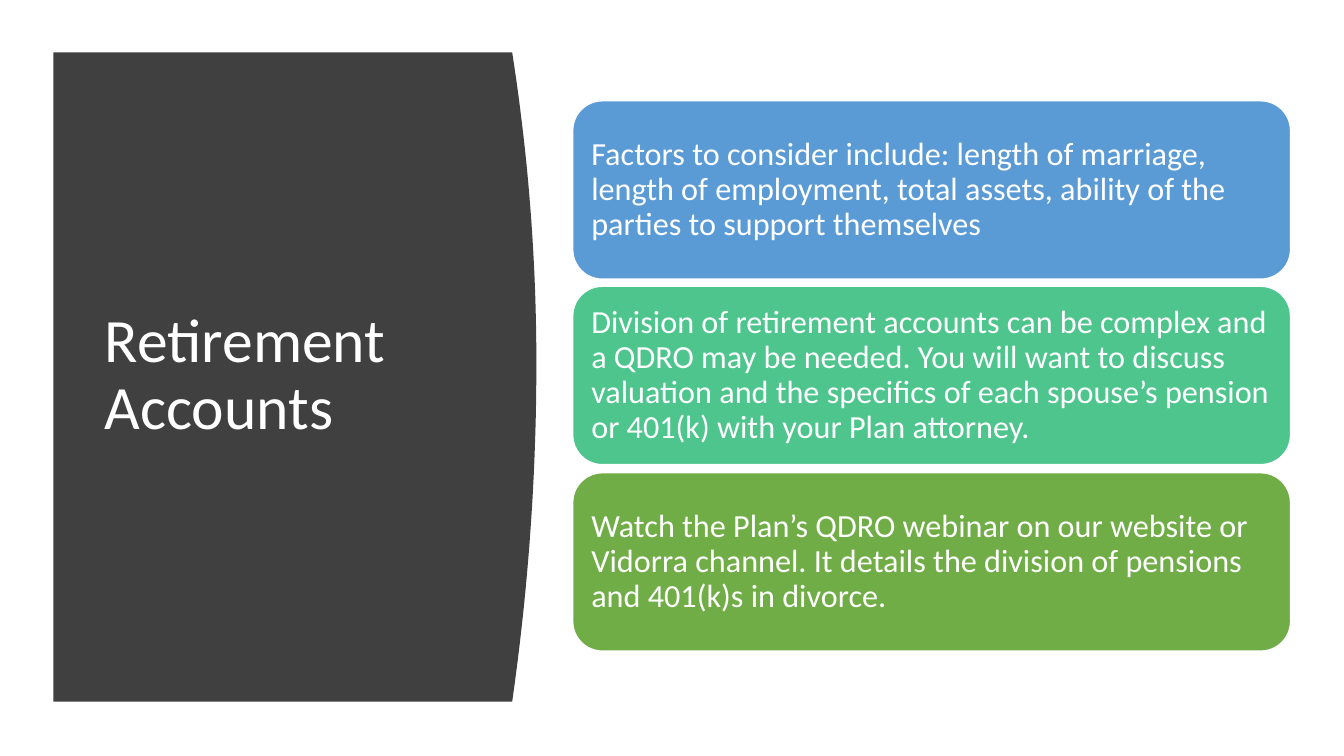
from dataclasses import dataclass

from pptx import Presentation
from pptx import util as u
from pptx.dml.color import RGBColor
from pptx.enum import shapes, text

PX = u.Inches(1) // 100  # 100 px to the inch


@dataclass(frozen=True)
class Theme:
    font: str = "Calibri"
    white: str = "FFFFFF"
    panel: str = "404040"
    cards: tuple = ("5B9BD5", "4DC58D", "70AD47")
    title_size: int = 44
    card_size: int = 23
    line_spacing: float = 0.9


def rgb(value):
    return RGBColor.from_string(value)


def set_text(frame, content, *, font, size, color, spacing, inset_x=10, inset_y=5):
    """Fill a text frame with one left-aligned, vertically centred paragraph."""
    frame.word_wrap = True
    frame.vertical_anchor = text.MSO_ANCHOR.MIDDLE
    frame.margin_left = frame.margin_right = inset_x * PX
    frame.margin_top = frame.margin_bottom = inset_y * PX
    paragraph = frame.paragraphs[0]
    paragraph.alignment = text.PP_ALIGN.LEFT
    paragraph.line_spacing = spacing
    run = paragraph.add_run()
    run.text = content
    run.font.name = font
    run.font.size = u.Pt(size)
    run.font.color.rgb = rgb(color)


class SlideBuilder:
    def __init__(self, slide, theme):
        self.slide = slide
        self.theme = theme

    def label(self, frame, content, size, **layout):
        theme = self.theme
        set_text(frame, content, font=theme.font, size=size, color=theme.white,
                 spacing=theme.line_spacing, **layout)

    def curved_panel(self, left, top, right, bottom, bulge, peak, steps=46):
        """Draw a panel whose right side bows out, furthest at height peak."""
        edge = []
        for step in range(steps + 1):
            y = top + (bottom - top) * step / steps
            reach = peak - top if y < peak else bottom - peak
            x = right + bulge * (1 - ((y - peak) / reach) ** 2)
            edge.append((round(x * PX), round(y * PX)))
        builder = self.slide.shapes.build_freeform(left * PX, top * PX)
        builder.add_line_segments(edge + [(left * PX, bottom * PX)], close=True)
        panel = builder.convert_to_shape()
        panel.shadow.inherit = False
        panel.fill.solid()
        panel.fill.fore_color.rgb = rgb(self.theme.panel)
        panel.line.fill.background()

    def title(self, content, left, top, width, height):
        box = self.slide.shapes.add_textbox(
            left * PX, top * PX, width * PX, height * PX)
        self.label(box.text_frame, content, self.theme.title_size)

    def card(self, content, color, left, top, width, height):
        card = self.slide.shapes.add_shape(
            shapes.MSO_SHAPE.ROUNDED_RECTANGLE,
            left * PX, top * PX, width * PX, height * PX)
        card.shadow.inherit = False
        card.fill.solid()
        card.fill.fore_color.rgb = rgb(color)
        card.line.color.rgb = rgb(self.theme.white)
        card.line.width = u.Pt(1)
        self.label(card.text_frame, content, self.theme.card_size, inset_y=10)


ADVICE = (
    "Factors to consider include: length of marriage, length of employment, "
    "total assets, ability of the parties to support themselves",
    "Division of retirement accounts can be complex and a QDRO may be needed. "
    "You will want to discuss valuation and the specifics of each spouse’s "
    "pension or 401(k) with your Plan attorney.",
    "Watch the Plan’s QDRO webinar on our website or Vidorra channel. "
    "It details the division of pensions and 401(k)s in divorce.",
)


def main():
    deck = Presentation()
    deck.slide_width, deck.slide_height = 1333 * PX, 750 * PX
    theme = Theme()
    builder = SlideBuilder(deck.slides.add_slide(deck.slide_layouts[6]), theme)

    # Dark panel with the title
    builder.curved_panel(53, 52, 508, 696, bulge=24, peak=360)
    builder.title("Retirement Accounts", 94, 111, 374, 524)

    # Advice cards, evenly spaced
    first_top, last_top = 100, 469
    pitch = (last_top - first_top) / (len(ADVICE) - 1)
    for index, (advice, color) in enumerate(zip(ADVICE, theme.cards)):
        top = int(first_top + index * pitch)
        builder.card(advice, color, 568, top, 712, 177)

    deck.save("out.pptx")


if __name__ == "__main__":
    main()
